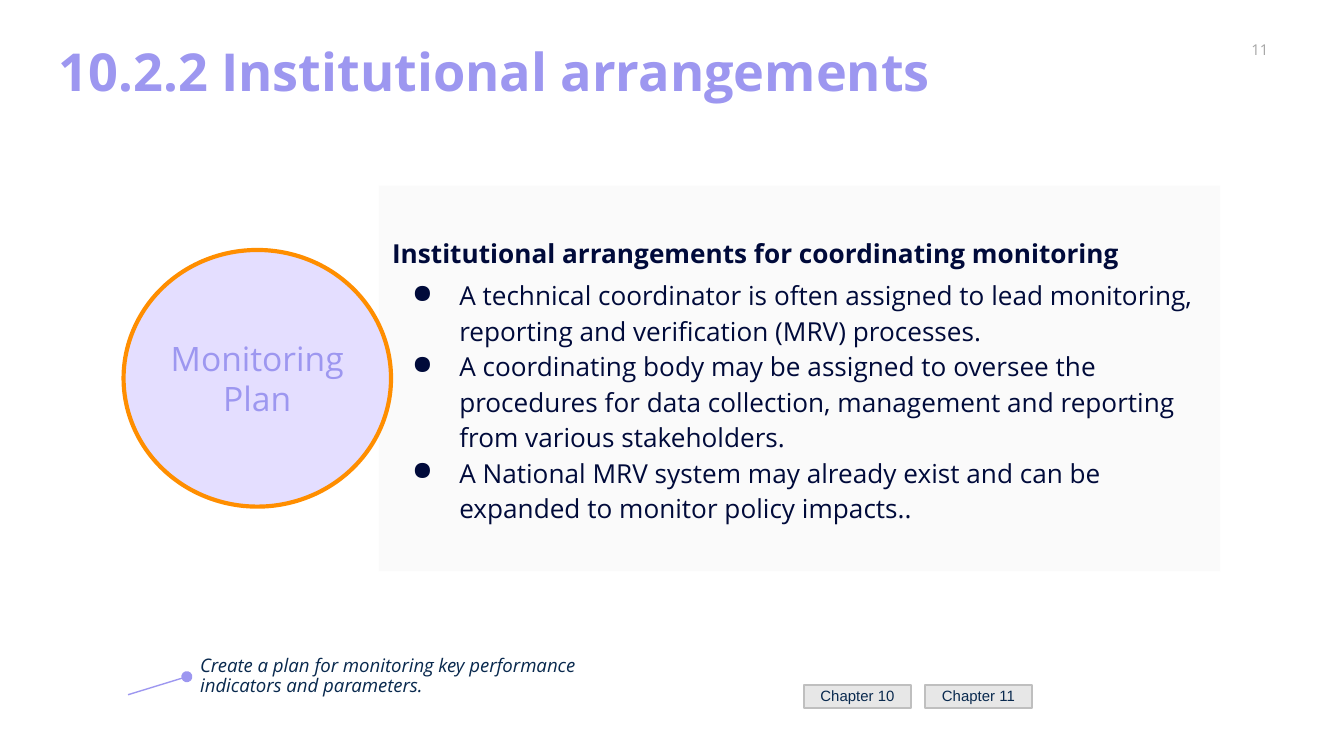
from lxml import etree
from pptx import Presentation, util as u
from pptx.dml.color import RGBColor
from pptx.enum import shapes, text
from pptx.oxml import ns

Pt = u.Pt
LEFT, CENTER = text.PP_ALIGN.LEFT, text.PP_ALIGN.CENTER
NAVY, LILAC, INK = "000A3A", "9D97F0", "09294E"
BULLETS = [
    "A technical coordinator is often assigned to lead monitoring, reporting and verification (MRV) processes.",
    "A coordinating body may be assigned to oversee the procedures for data collection, management and reporting from various stakeholders.",
    "A National MRV system may already exist and can be expanded to monitor policy impacts..",
]


def rgb(value):
    return RGBColor.from_string(value)


def sub(parent, tag, **attrs):
    return etree.SubElement(parent, ns.qn(tag), attrs)


class Deck:
    """Hold the presentation style and the current slide."""

    font = "Open Sans"
    inset = (7.2, 3.6)

    def __init__(self, width, height):
        self.prs = Presentation()
        self.prs.slide_width, self.prs.slide_height = Pt(width), Pt(height)
        self.s = self.prs.slides.add_slide(self.prs.slide_layouts[6])

    def frame(self, sp, inset=None):
        x, y = inset or self.inset
        tf = sp.text_frame
        fmt = {"word_wrap": True, "auto_size": text.MSO_AUTO_SIZE.NONE,
               "vertical_anchor": text.MSO_ANCHOR.MIDDLE,
               "margin_left": Pt(x), "margin_right": Pt(x),
               "margin_top": Pt(y), "margin_bottom": Pt(y)}
        for name, value in fmt.items():
            setattr(tf, name, value)

    def fill_text(self, p, words, color, size, align=LEFT, spacing=1.0, before=0, **font):
        fmt = {"alignment": align, "line_spacing": spacing, "space_before": Pt(before)}
        for name, value in fmt.items():
            setattr(p, name, value)
        r = p.add_run()
        r.text = words
        for name, value in {"name": self.font, "size": Pt(size), **font}.items():
            setattr(r.font, name, value)
        r.font.color.rgb = rgb(color)

    def label(self, box, words, color, size, inset=None, **style):
        sp = self.s.shapes.add_textbox(*map(Pt, box))
        self.frame(sp, inset)
        self.fill_text(sp.text_frame.paragraphs[0], words, color, size, **style)
        return sp

    def shape(self, kind, box, fill, line=None, weight=1, inset=None):
        sp = self.s.shapes.add_shape(kind, *map(Pt, box))
        sp.shadow.inherit = False
        sp.fill.solid()
        sp.fill.fore_color.rgb = rgb(fill)
        if line:
            sp.line.color.rgb = rgb(line)
            sp.line.width = Pt(weight)
        else:
            sp.line.fill.background()
        self.frame(sp, inset)
        return sp

    def bullet(self, tf, words, color, size, **style):
        p = tf.add_paragraph()
        pPr = p._p.get_or_add_pPr()
        pPr.set("marL", str(Pt(36)))
        pPr.set("indent", str(Pt(-25.2)))
        sub(sub(pPr, "a:buClr"), "a:srgbClr", val=color)
        sub(pPr, "a:buChar", char="●")
        self.fill_text(p, words, color, size, **style)

    def pointer(self, x, y, target, color, weight):
        sp = self.s.shapes.add_connector(shapes.MSO_CONNECTOR.STRAIGHT, Pt(x), Pt(y), Pt(x), Pt(y))
        sp.end_connect(target, 1)
        sp.line.color.rgb = rgb(color)
        sp.line.width = Pt(weight)
        spPr = sp._element.spPr
        sub(spPr.find(ns.qn("a:ln")), "a:tailEnd", type="oval")
        sub(spPr, "a:effectLst")


def main():
    deck = Deck(720, 405)
    kind = shapes.MSO_SHAPE
    deck.label((646.5, 18.7, 56.9, 15.8), "11", "A5A5A5", 8, inset=(0, 0), align=CENTER)
    deck.label((24.5, 17.3, 671, 45.4), "10.2.2 Institutional arrangements", LILAC, 28,
               spacing=0.9, bold=True)

    for i, chapter in enumerate(("Chapter 10", "Chapter 11")):
        sp = deck.shape(kind.RECTANGLE, (430.6 + 64.8 * i, 367.2, 57.6, 12.2), "E7E7E7", "BFBFBF")
        deck.fill_text(sp.text_frame.paragraphs[0], chapter, INK, 8, CENTER, 0.9, name="Arial")

    caption = deck.label((100.1, 347.8, 243.4, 29.5),
                         "Create a plan for monitoring key performance indicators and parameters.",
                         INK, 10, spacing=0.9, italic=True)
    deck.pointer(68.6, 372.2, caption, LILAC, 0.75)

    panel = deck.shape(kind.RECTANGLE, (203, 99.4, 450.7, 206.6), "FAFAFA")
    tf = panel.text_frame
    deck.fill_text(tf.paragraphs[0], "Institutional arrangements for coordinating monitoring",
                   NAVY, 14, spacing=1.13, bold=True)
    for i, words in enumerate(BULLETS):
        deck.bullet(tf, words, NAVY, 14, spacing=1.13, before=0 if i else 4)

    plan = deck.shape(kind.OVAL, (66.2, 133.9, 143.3, 137.5), "E4DEFF", "FF8E00", 2.25, (0, 0))
    deck.fill_text(plan.text_frame.paragraphs[0], "Monitoring Plan", LILAC, 18, CENTER)
    deck.prs.save("out.pptx")


if __name__ == "__main__":
    main()
